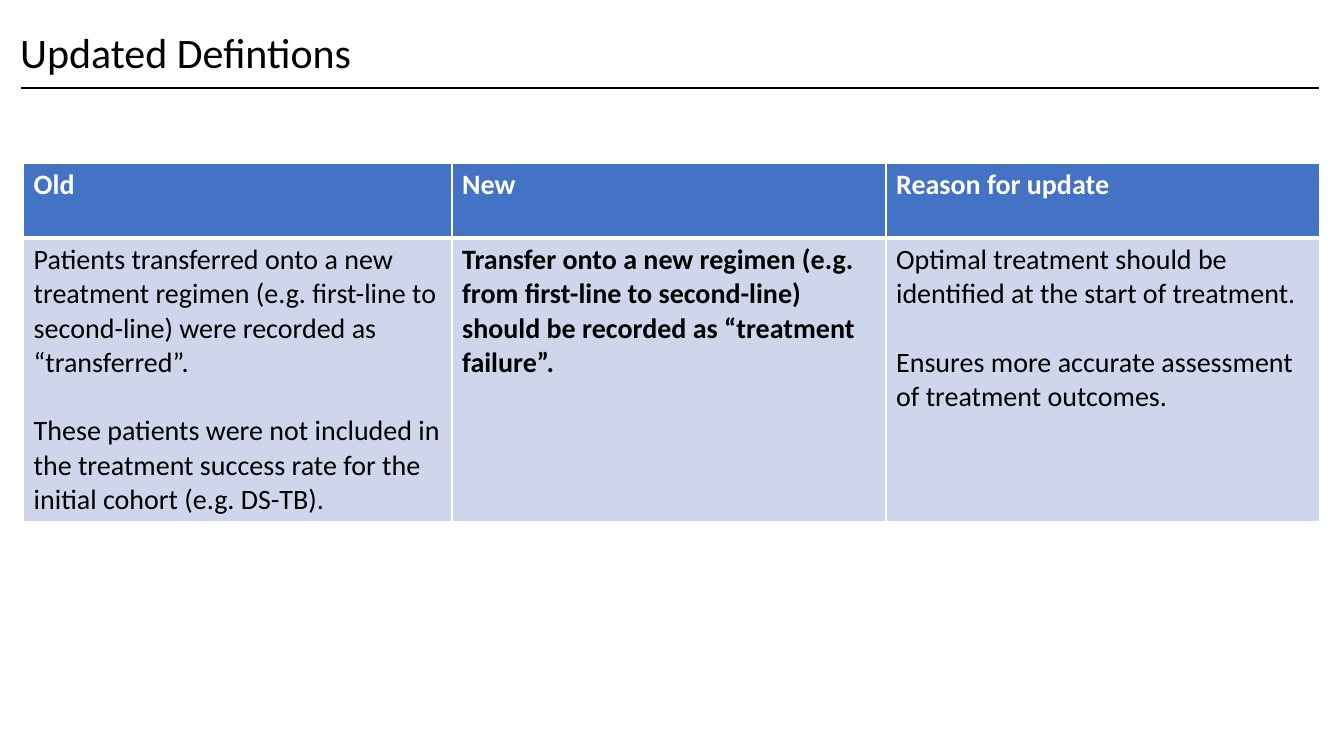
from pptx import Presentation
from pptx.dml.color import RGBColor as RGB
from pptx.enum.shapes import MSO_CONNECTOR as CONN
from pptx.enum.text import MSO_ANCHOR as ANCHOR, MSO_AUTO_SIZE as AUTO, PP_ALIGN as ALIGN
from pptx.oxml import parse_xml
from pptx.oxml.ns import nsdecls
from pptx.util import Pt

# Content
TITLE = "Updated Defintions"
HEADERS = ["Old", "New", "Reason for update"]
DEFINITIONS = [
    ["Patients transferred onto a new treatment regimen (e.g. first-line to "
     "second-line) were recorded as “transferred”.",
     "These patients were not included in the treatment success rate for the "
     "initial cohort (e.g. DS-TB)."],
    ["Transfer onto a new regimen (e.g. from first-line to second-line) "
     "should be recorded as “treatment failure”."],
    ["Optimal treatment should be identified at the start of treatment.",
     "Ensures more accurate assessment of treatment outcomes."],
]
NEW_COLUMN = 1


class Theme:
    font = "Calibri"
    title_size, table_size = 30, 20
    black, white = RGB(0, 0, 0), RGB(255, 255, 255)
    header, body = RGB(0x44, 0x72, 0xC4), RGB(0xCF, 0xD5, 0xEA)
    border, header_rule = 1, 3
    paragraph_gap = 24.4


# Layout, in points
SLIDE = (960, 540)
TITLE_BOX = (7.2, 8.64, 943.2, 61.2)
RULE_X, RULE_Y = (15.12, 942.5), 62.6
TABLE_LEFT, TABLE_TOP = 16.9, 116.5
COLUMNS = [306, 310, 310]
ROWS = [53.3, 203]


def style(p, size, color, bold=False):
    f = p.font
    f.name, f.size, f.bold = Theme.font, Pt(size), bold
    f.color.rgb = color


def set_borders(cell, top, bottom):
    widths = {"lnL": Theme.border, "lnR": Theme.border, "lnT": top, "lnB": bottom}
    for tag, width in widths.items():
        cell._tc.get_or_add_tcPr().append(parse_xml(
            f'<a:{tag} {nsdecls("a")} w="{Pt(width)}"><a:solidFill>'
            f'<a:srgbClr val="{Theme.white}"/></a:solidFill></a:{tag}>'))


def fill_cell(cell, paragraphs, fill, color, bold, top, bottom):
    set_borders(cell, top, bottom)
    cell.fill.solid()
    cell.fill.fore_color.rgb = fill
    tf = cell.text_frame
    for i, text in enumerate(paragraphs):
        p = tf.add_paragraph() if i else tf.paragraphs[0]
        p.text = text
        style(p, Theme.table_size, color, bold)
        if i:
            p.space_before = Pt(Theme.paragraph_gap)


prs = Presentation()
prs.slide_width, prs.slide_height = map(Pt, SLIDE)
s = prs.slides.add_slide(prs.slide_layouts[5])

# Title
sp = s.shapes.title
sp.left, sp.top, sp.width, sp.height = map(Pt, TITLE_BOX)
tf = sp.text_frame
tf.text = TITLE
tf.auto_size, tf.vertical_anchor = AUTO.NONE, ANCHOR.MIDDLE
p = tf.paragraphs[0]
p.alignment, p.line_spacing = ALIGN.LEFT, 0.9
style(p, Theme.title_size, Theme.black)

# Table of definitions
table = s.shapes.add_table(
    len(ROWS), len(COLUMNS), Pt(TABLE_LEFT), Pt(TABLE_TOP),
    Pt(sum(COLUMNS)), Pt(sum(ROWS))).table
for row, height in zip(table.rows, ROWS):
    row.height = Pt(height)
for c, width in enumerate(COLUMNS):
    table.columns[c].width = Pt(width)
    fill_cell(table.cell(0, c), [HEADERS[c]], Theme.header, Theme.white,
              True, Theme.border, Theme.header_rule)
    fill_cell(table.cell(1, c), DEFINITIONS[c], Theme.body, Theme.black,
              c == NEW_COLUMN, Theme.header_rule, Theme.border)

# Rule under the title
rule = s.shapes.add_connector(
    CONN.STRAIGHT, Pt(RULE_X[0]), Pt(RULE_Y), Pt(RULE_X[1]), Pt(RULE_Y))
rule.line.color.rgb = Theme.black
rule.line.width = Pt(1.5)
rule._element.spPr.append(parse_xml(f'<a:effectLst {nsdecls("a")}/>'))

prs.save("out.pptx")
